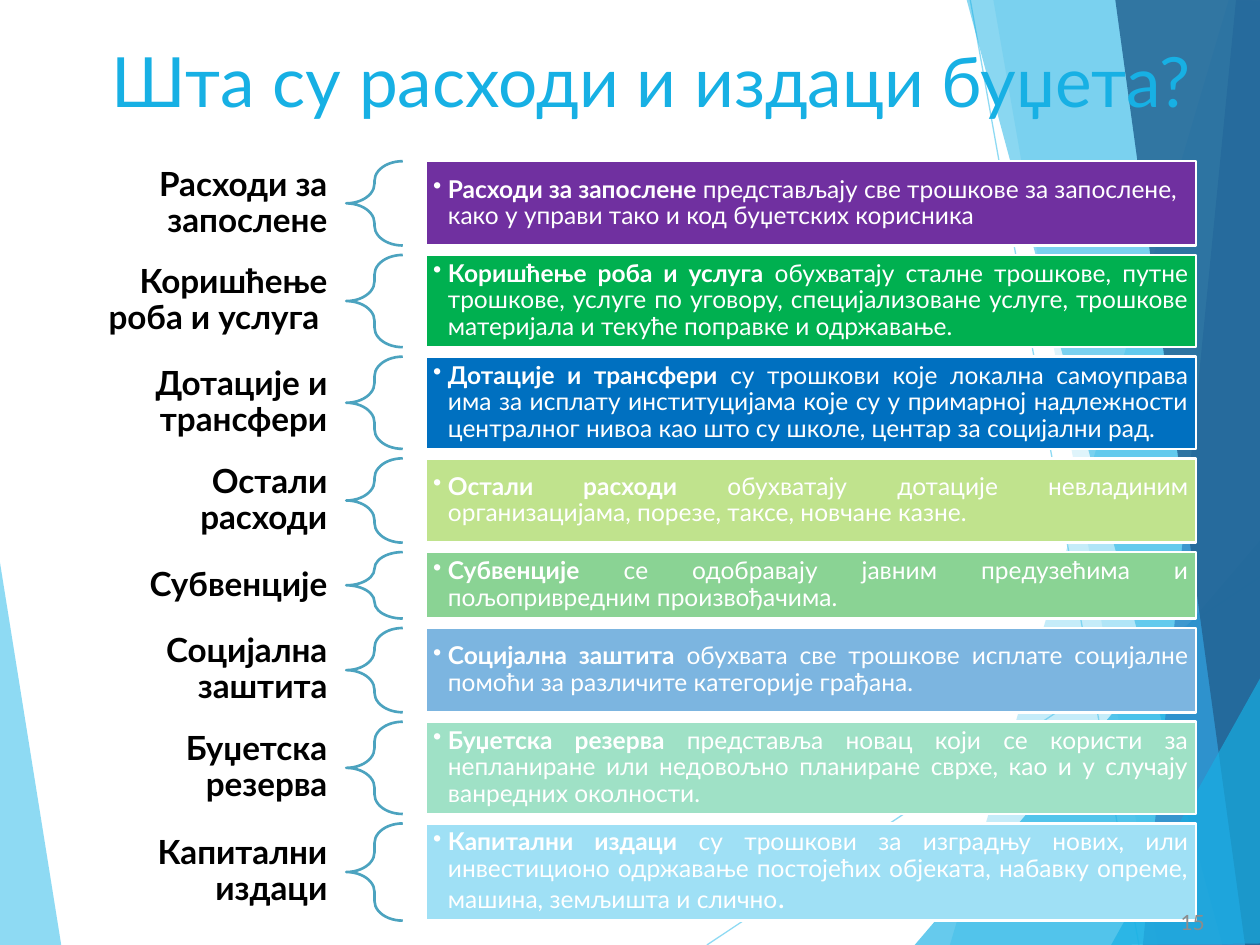
from lxml import etree
from pptx import Presentation
from pptx.dml.color import RGBColor
from pptx.enum.shapes import MSO_CONNECTOR, MSO_SHAPE
from pptx.enum.text import MSO_ANCHOR, PP_ALIGN
from pptx.oxml.ns import qn
from pptx.util import Cm, Pt

RECTANGLE, BRACE = MSO_SHAPE.RECTANGLE, MSO_SHAPE.LEFT_BRACE
STRAIGHT, MIDDLE = MSO_CONNECTOR.STRAIGHT, MSO_ANCHOR.MIDDLE
LEFT, CENTER, RIGHT, JUSTIFY = PP_ALIGN.LEFT, PP_ALIGN.CENTER, PP_ALIGN.RIGHT, PP_ALIGN.JUSTIFY

THEME = {
    "font": "Lato",
    "sky": "5FCBEF", "cyan": "17B0E4", "blue": "2E83C3", "navy": "226292",
    "title": "17B0E4", "label": "000000", "body": "FFFFFF", "number": "8C8C8C",
    "brace": "4CA3BF", "border": "FFFFFF",
    "title_size": 39.6, "label_size": 19, "body_size": 14, "stop_size": 17, "number_size": 12,
}

# Content: label, label height, row height, panel colour, alignment, lead, description
TITLE = "Шта су расходи и издаци буџета?"
PAGE_NUMBER = "15"
ROWS = [
    ("Расходи за запослене", 1.7, 1.7, "7030A0", LEFT, "Расходи за запослене ",
     "представљају све трошкове за запослене, како у управи тако и код буџетских корисника"),
    ("Коришћење роба и услуга ", 1.7, 1.86, "00B050", JUSTIFY, "Коришћење роба и услуга ",
     "обухватају сталне трошкове, путне трошкове, услуге по уговору, специјализоване услуге, "
     "трошкове материјала и текуће поправке и одржавање."),
    ("Дотације и трансфери", 1.7, 1.86, "0070C0", JUSTIFY, "Дотације и трансфери ",
     "су трошкови које локална самоуправа има за исплату институцијама које су у примарној "
     "надлежности централног нивоа као што су школе, центар за социјални рад. "),
    ("Остали расходи", 1.7, 1.7, "C0E38D", JUSTIFY, "Остали расходи ",
     "обухватају дотације невладиним организацијама, порезе, таксе, новчане казне."),
    ("Субвенције", 1.04, 1.34, "8AD394", JUSTIFY, "Субвенције",
     " сe одобравају јавним предузећима и пољопривредним произвођачима. "),
    ("Социјална заштита", 1.7, 1.7, "7CB5E0", JUSTIFY, "Социјална заштита ",
     "обухвата све трошкове исплате социјалне помоћи за различите категорије грађана."),
    ("Буџетска резерва", 1.7, 1.86, "9FE1C6", JUSTIFY, "Буџетска резерва ",
     "представља новац који се користи за непланиране или недовољно планиране сврхе, "
     "као и у случају ванредних околности."),
    ("Капитални издаци", 1.7, 1.96, "9FE0F5", JUSTIFY, "Капитални издаци ",
     "су трошкови за изградњу нових, или инвестиционо одржавање постојећих објеката, "
     "набавку опреме, машина, земљишта и слично"),
]
LARGE_STOP = "."  # closes the last row in a larger size

# Background facets: colour, opacity in percent, corners in cm
LEFT_FACET = ("sky", 70, [(-0.03, 11.15), (1.24, 19.08), (-0.03, 19.05)])
RAYS = [((14.25, 19.05), (25.43, 11.61)), ((19.56, 0), (22.96, 19.05))]
RAY_OPACITY = 70
RIGHT_FACETS = [
    ("sky", 36, [(24.77, 0), (19.15, 19.05), (25.45, 19.08), (25.43, 0.03)]),
    ("sky", 20, [(20.02, -0.03), (23.34, 19.05), (25.43, 19.05), (25.43, -0.03)]),
    ("cyan", 66, [(18.44, 19.05), (25.4, 10.9), (25.43, 19.05)]),
    ("cyan", 50, [(19.48, -0.03), (24.64, 19.05), (25.43, 19.02), (25.43, -0.03)]),
    ("blue", 70, [(24.92, -0.03), (23.04, 19.05), (25.43, 19.05), (25.4, -0.03)]),
    ("navy", 82, [(22.48, -0.03), (25.1, 19.05), (25.45, 19.05), (25.4, -0.03)]),
    ("cyan", 66, [(22.4, 19.05), (25.45, 13.59), (25.45, 19.02)]),
]

# Row layout in cm
FIRST_TOP, ROW_GAP = 3.25, 0.19
LABEL_LEFT, LABEL_WIDTH = 1.27, 5.71
BRACE_LEFT, BRACE_WIDTH = 6.98, 1.14
PANEL_LEFT, PANEL_WIDTH = 8.58, 15.53
LABEL_INSETS = (0.38, 0.13, 0.38, 0.13)
PANEL_INSETS = (0.15, 0.15, 0.15, 0.15)
BOX_INSETS = (0.25, 0.13, 0.25, 0.13)
BULLET_INDENT = 0.3


def apply(target, values):
    for name, value in values.items():
        setattr(target, name, value)


def set_opacity(owner, percent):
    color = next(owner.iter(qn("a:srgbClr")))
    etree.SubElement(color, qn("a:alpha"), val=str(percent * 1000))


def set_line(shape, color, width):
    shape.line.color.rgb = RGBColor.from_string(color)
    shape.line.width = Pt(width)


def add_facet(slide, color, opacity, corners):
    points = [(Cm(x), Cm(y)) for x, y in corners]
    builder = slide.shapes.build_freeform(*points[0])
    builder.add_line_segments(points[1:], close=True)
    shape = builder.convert_to_shape()
    shape.shadow.inherit = False
    shape.fill.solid()
    shape.fill.fore_color.rgb = RGBColor.from_string(THEME[color])
    shape.line.fill.background()
    set_opacity(shape.fill._xPr.find(qn("a:solidFill")), opacity)


def add_ray(slide, start, end):
    ray = slide.shapes.add_connector(STRAIGHT, *(Cm(value) for value in start + end))
    set_line(ray, THEME["sky"], 0.75)
    set_opacity(ray.line._get_or_add_ln(), RAY_OPACITY)
    etree.SubElement(ray._element.spPr, qn("a:effectLst"))


def add_preset(slide, kind, box):
    shape = slide.shapes.add_shape(kind, *(Cm(value) for value in box))
    shape.shadow.inherit = False
    return shape


def write(shape, runs, color, alignment, insets=BOX_INSETS, line_spacing=1.0):
    """Fill one paragraph; runs are (text, size, bold)."""
    frame = shape.text_frame
    sides = ("margin_left", "margin_top", "margin_right", "margin_bottom")
    apply(frame, {"word_wrap": True, "vertical_anchor": MIDDLE,
                  **dict(zip(sides, map(Cm, insets)))})
    paragraph = frame.paragraphs[0]
    apply(paragraph, {"alignment": alignment, "line_spacing": line_spacing})
    for text, size, bold in runs:
        run = paragraph.add_run()
        run.text = text
        apply(run.font, {"name": THEME["font"], "size": Pt(size), "bold": bold})
        run.font.color.rgb = RGBColor.from_string(color)
    return paragraph


def add_text(slide, box, *text_format):
    shape = slide.shapes.add_textbox(*(Cm(value) for value in box))
    write(shape, *text_format)


def add_bullet(paragraph):
    properties = paragraph._p.get_or_add_pPr()
    properties.set("marL", str(Cm(BULLET_INDENT)))
    properties.set("indent", str(-Cm(BULLET_INDENT)))
    etree.SubElement(properties, qn("a:buChar"), char="•")


def add_row(slide, top, row, extra_runs):
    label, label_height, height, color, alignment, lead, description = row

    # Label, centred on the row
    label_box = (LABEL_LEFT, top + (height - label_height) / 2, LABEL_WIDTH, label_height)
    add_text(slide, label_box, [(label, THEME["label_size"], True)],
             THEME["label"], RIGHT, LABEL_INSETS, 0.9)

    # Brace
    brace = add_preset(slide, BRACE, (BRACE_LEFT, top, BRACE_WIDTH, height))
    brace.adjustments[0] = 0.35
    brace.fill.background()
    set_line(brace, THEME["brace"], 1.5)

    # Description panel
    panel = add_preset(slide, RECTANGLE, (PANEL_LEFT, top, PANEL_WIDTH, height))
    panel.fill.solid()
    panel.fill.fore_color.rgb = RGBColor.from_string(color)
    set_line(panel, THEME["border"], 1.5)
    size = THEME["body_size"]
    runs = [(lead, size, True), (description, size, False)] + extra_runs
    add_bullet(write(panel, runs, THEME["body"], alignment, PANEL_INSETS, 0.9))


def main():
    presentation = Presentation()
    apply(presentation, {"slide_width": Cm(25.4), "slide_height": Cm(19.05)})
    slide = presentation.slides.add_slide(presentation.slide_layouts[6])

    # Background
    add_facet(slide, *LEFT_FACET)
    for start, end in RAYS:
        add_ray(slide, start, end)
    for facet in RIGHT_FACETS:
        add_facet(slide, *facet)

    # Title
    add_text(slide, (1.7, 0.74, 22.86, 1.73), [(TITLE, THEME["title_size"], False)],
             THEME["title"], CENTER)

    # Expense rows
    top = FIRST_TOP
    for row in ROWS:
        extra_runs = [(LARGE_STOP, THEME["stop_size"], False)] if row is ROWS[-1] else []
        add_row(slide, top, row, extra_runs)
        top += row[2] + ROW_GAP

    # Page number
    add_text(slide, (18.62, 18.08, 5.92, 1.02), [(PAGE_NUMBER, THEME["number_size"], False)],
             THEME["number"], RIGHT)

    presentation.save("out.pptx")


if __name__ == "__main__":
    main()
